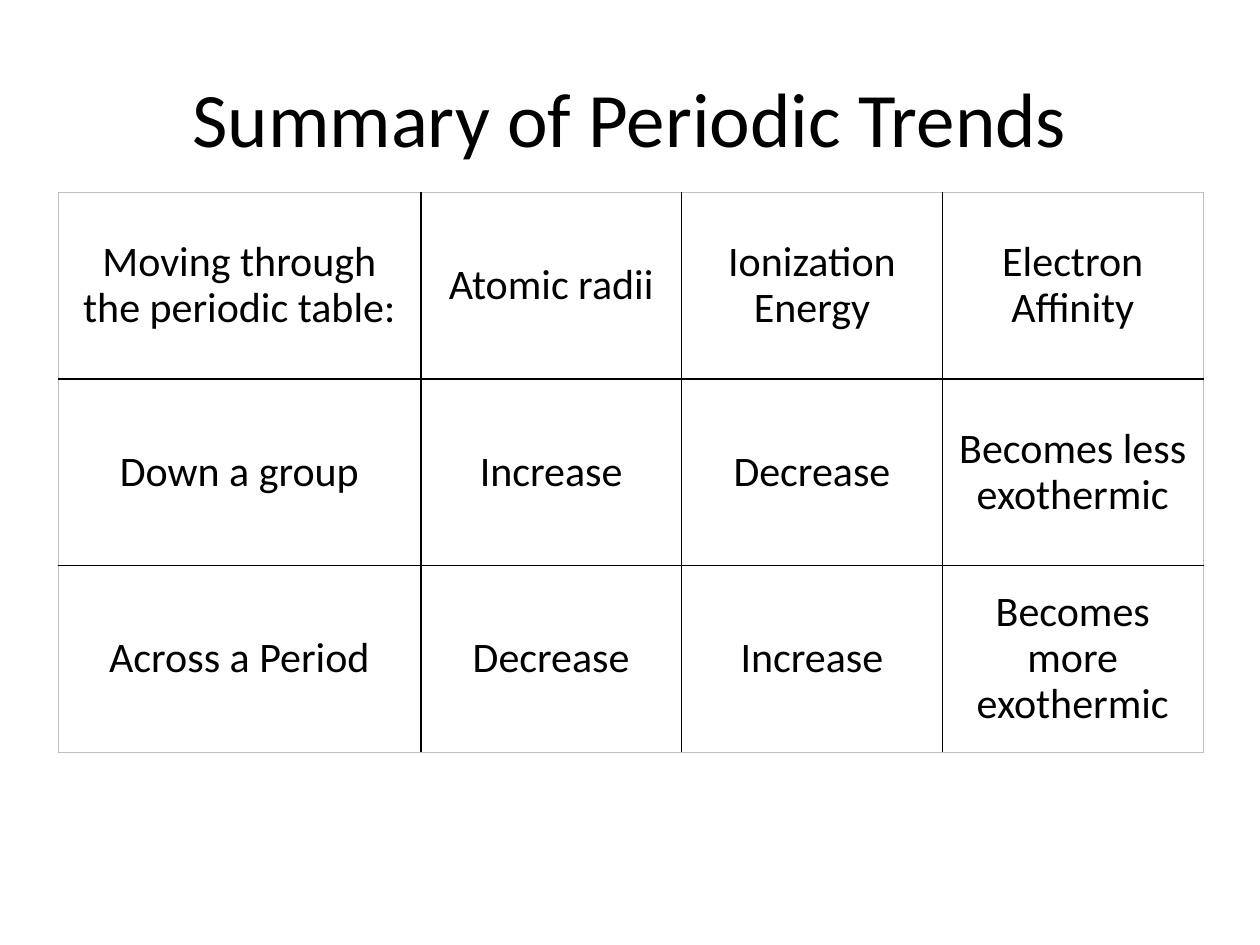
"""Build a slide with a table that sums up the periodic trends."""
from dataclasses import dataclass

from lxml import etree
from pptx import Presentation
from pptx.dml.color import RGBColor
from pptx.enum.text import MSO_ANCHOR, PP_ALIGN
from pptx.oxml.ns import qn
from pptx.slide import Slide
from pptx.table import _Cell
from pptx.text.text import TextFrame
from pptx.util import Inches, Pt

MIDDLE = MSO_ANCHOR.MIDDLE
CENTER = PP_ALIGN.CENTER
FONT = "Calibri"
BLACK = "000000"
GREY = "BFBFBF"
COL_WIDTHS = (2.88, 2.07, 2.07, 2.07)
ROW_HEIGHT = 1.48


@dataclass(frozen=True)
class Trend:
    label: str
    radii: str
    ionization: str
    affinity: str

    def texts(self) -> tuple[str, ...]:
        return self.label, self.radii, self.ionization, self.affinity


@dataclass(frozen=True)
class Border:
    color: str
    width: float


INNER = Border(BLACK, 1)
OUTER = Border(GREY, 0.5)
TRENDS = (
    Trend("Moving through the periodic table:", "Atomic radii",
          "Ionization Energy", "Electron Affinity"),
    Trend("Down a group", "Increase", "Decrease", "Becomes less exothermic"),
    Trend("Across a Period", "Decrease", "Increase", "Becomes more exothermic"),
)


def rgb(color: str) -> RGBColor:
    return RGBColor.from_string(color)


def write(tf: TextFrame, text: str, *, size: float, color: str = BLACK,
          spacing: float = 1.0) -> None:
    tf.word_wrap = True
    p = tf.paragraphs[0]
    p.alignment = CENTER
    p.line_spacing = spacing
    r = p.add_run()
    r.text = text
    r.font.name = FONT
    r.font.size = Pt(size)
    r.font.color.rgb = rgb(color)


def set_borders(cell: _Cell, borders: dict[str, Border]) -> None:
    tc_pr = cell._tc.get_or_add_tcPr()
    for i, (side, border) in enumerate(borders.items()):
        ln = etree.Element(qn(f"a:{side}"), w=str(Pt(border.width)))
        fill = etree.SubElement(ln, qn("a:solidFill"))
        etree.SubElement(fill, qn("a:srgbClr"), val=border.color)
        tc_pr.insert(i, ln)


def add_title(s: Slide, text: str) -> None:
    sp = s.shapes.add_textbox(Inches(0.5), Inches(0.3), Inches(9), Inches(1.25))
    sp.text_frame.vertical_anchor = MIDDLE
    write(sp.text_frame, text, size=44)


def add_trends(s: Slide, trends: tuple[Trend, ...]) -> None:
    n_rows, n_cols = len(trends), len(COL_WIDTHS)
    table = s.shapes.add_table(
        n_rows, n_cols, Inches(0.46), Inches(1.53),
        Inches(sum(COL_WIDTHS)), Inches(ROW_HEIGHT * n_rows)).table
    table.first_row = table.horz_banding = False
    for col, width in zip(table.columns, COL_WIDTHS):
        col.width = Inches(width)
    for i, trend in enumerate(trends):
        table.rows[i].height = Inches(ROW_HEIGHT)
        for j, text in enumerate(trend.texts()):
            cell = table.cell(i, j)
            cell.vertical_anchor = MIDDLE
            cell.fill.background()
            write(cell.text_frame, text, size=24, spacing=0.9)
            set_borders(cell, {
                "lnL": OUTER if j == 0 else INNER,
                "lnR": OUTER if j == n_cols - 1 else INNER,
                "lnT": OUTER if i == 0 else INNER,
                "lnB": OUTER if i == n_rows - 1 else INNER,
            })


def main() -> None:
    prs = Presentation()
    prs.slide_width, prs.slide_height = Inches(10), Inches(7.5)
    s = prs.slides.add_slide(prs.slide_layouts[6])
    add_trends(s, TRENDS)
    add_title(s, "Summary of Periodic Trends")
    prs.save("out.pptx")


if __name__ == "__main__":
    main()
